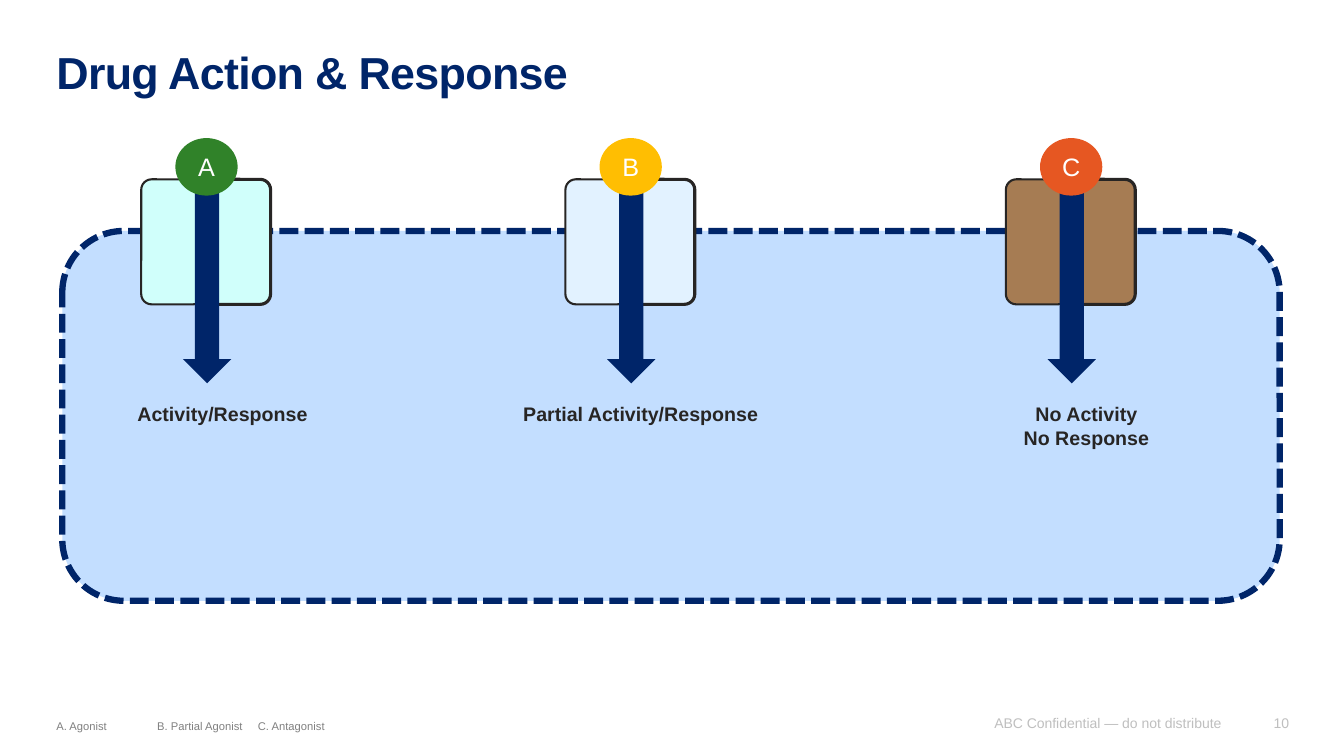
from lxml import etree
from pptx import Presentation
from pptx.dml.color import RGBColor
from pptx.enum import dml, shapes, text
from pptx.oxml import ns
from pptx.util import Cm, Pt

TITLE = "Drug Action & Response"
NAVY, INK, SKY = "002569", "272524", "C3DEFF"
WHITE, GREY, PALE = "FFFFFF", "808080", "BFBFBF"

# letter, badge colour, receptor colour, receptor left, label left, label lines (cm)
DRUGS = [
    ("A", "308229", "D0FFFB", 3.56, 1.98, ["Activity/Response"]),
    ("B", "FFBE02", "E2F2FF", 14.25, 12.52, ["Partial Activity/Response"]),
    ("C", "E65722", "A67C53", 25.35, 23.75, ["No Activity", "No Response"]),
]
KEY = ["A. Agonist", "B. Partial Agonist", "C. Antagonist"]
KEY_TABS = [2.54, 5.8]
FOOTER = [("10", 31.22, 1.27), ("ABC Confidential — do not distribute", 24.56, 6.22)]

SHAPE = shapes.MSO_SHAPE
ALIGN = text.PP_ALIGN
ANCHOR = text.MSO_ANCHOR


def color(value):
    return RGBColor.from_string(value)


def write(sp, lines, size, ink, align=ALIGN.LEFT, bold=False, anchor=ANCHOR.TOP, inset=True):
    tf = sp.text_frame
    tf.word_wrap = True
    tf.auto_size = text.MSO_AUTO_SIZE.NONE
    tf.vertical_anchor = anchor
    if not inset:
        tf.margin_left = tf.margin_top = tf.margin_right = tf.margin_bottom = 0
    tf.text = "\n".join(lines)
    for p in tf.paragraphs:
        p.alignment = align
        p.font.name, p.font.size, p.font.bold = "Arial", Pt(size), bold
        p.font.color.rgb = color(ink)
    return tf.paragraphs[0]


def add_box(left, top, width, height):
    return slide.shapes.add_textbox(Cm(left), Cm(top), Cm(width), Cm(height))


def add_shape(kind, left, top, width, height, fill, line=None, weight=0):
    sp = slide.shapes.add_shape(kind, Cm(left), Cm(top), Cm(width), Cm(height))
    sp.shadow.inherit = False
    sp.fill.solid()
    sp.fill.fore_color.rgb = color(fill)
    if line:
        sp.line.color.rgb = color(line)
        sp.line.width = Pt(weight)
    else:
        sp.line.fill.background()
    return sp


def add_tabs(p, stops):
    tabs = etree.SubElement(p._p.get_or_add_pPr(), ns.qn("a:tabLst"))
    for stop in stops:
        etree.SubElement(tabs, ns.qn("a:tab"), pos=str(Cm(stop)), algn="l")


prs = Presentation()
prs.slide_width, prs.slide_height = Cm(33.87), Cm(19.05)
slide = prs.slides.add_slide(prs.slide_layouts[5])

title = slide.shapes.title
title.left, title.top, title.width, title.height = Cm(1.42), Cm(1.27), Cm(31.06), Cm(2.54)
p = write(title, [TITLE], 32, NAVY, bold=True, inset=False)
p.line_spacing = 0.9
p.runs[0]._r.get_or_add_rPr().set("spc", "-50")

for words, left, width in FOOTER:
    write(add_box(left, 17.73, width, 0.69), [words], 10, PALE, ALIGN.RIGHT,
          anchor=ANCHOR.BOTTOM, inset=False)

key = add_box(1.42, 17.78, 16.15, 0.69)
add_tabs(key.text_frame.paragraphs[0], KEY_TABS)
write(key, ["\t".join(KEY)], 8, GREY, anchor=ANCHOR.BOTTOM, inset=False)

cell = add_shape(SHAPE.ROUNDED_RECTANGLE, 1.57, 5.82, 30.68, 9.32, SKY, NAVY, 4.5)
cell.line.dash_style = dml.MSO_LINE.SQUARE_DOT

for letter, badge_fill, receptor_fill, left, label_left, label in DRUGS:
    for offset, weight in ((0, 1.5), (1.69, 2.25)):
        add_shape(SHAPE.ROUNDED_RECTANGLE, left + offset, 4.52, 1.57, 3.15,
                  receptor_fill, INK, weight)
    add_shape(SHAPE.DOWN_ARROW, left + 1.05, 4.78, 1.22, 4.88, NAVY)
    write(add_box(label_left, 10.01, 7.26, 0.26 + 0.6 * len(label)), label, 14, INK,
          ALIGN.CENTER, bold=True)
    badge = add_shape(SHAPE.OVAL, left + 0.86, 3.48, 1.57, 1.45, badge_fill)
    write(badge, [letter], 18, WHITE, ALIGN.CENTER, anchor=ANCHOR.MIDDLE)

prs.save("out.pptx")
